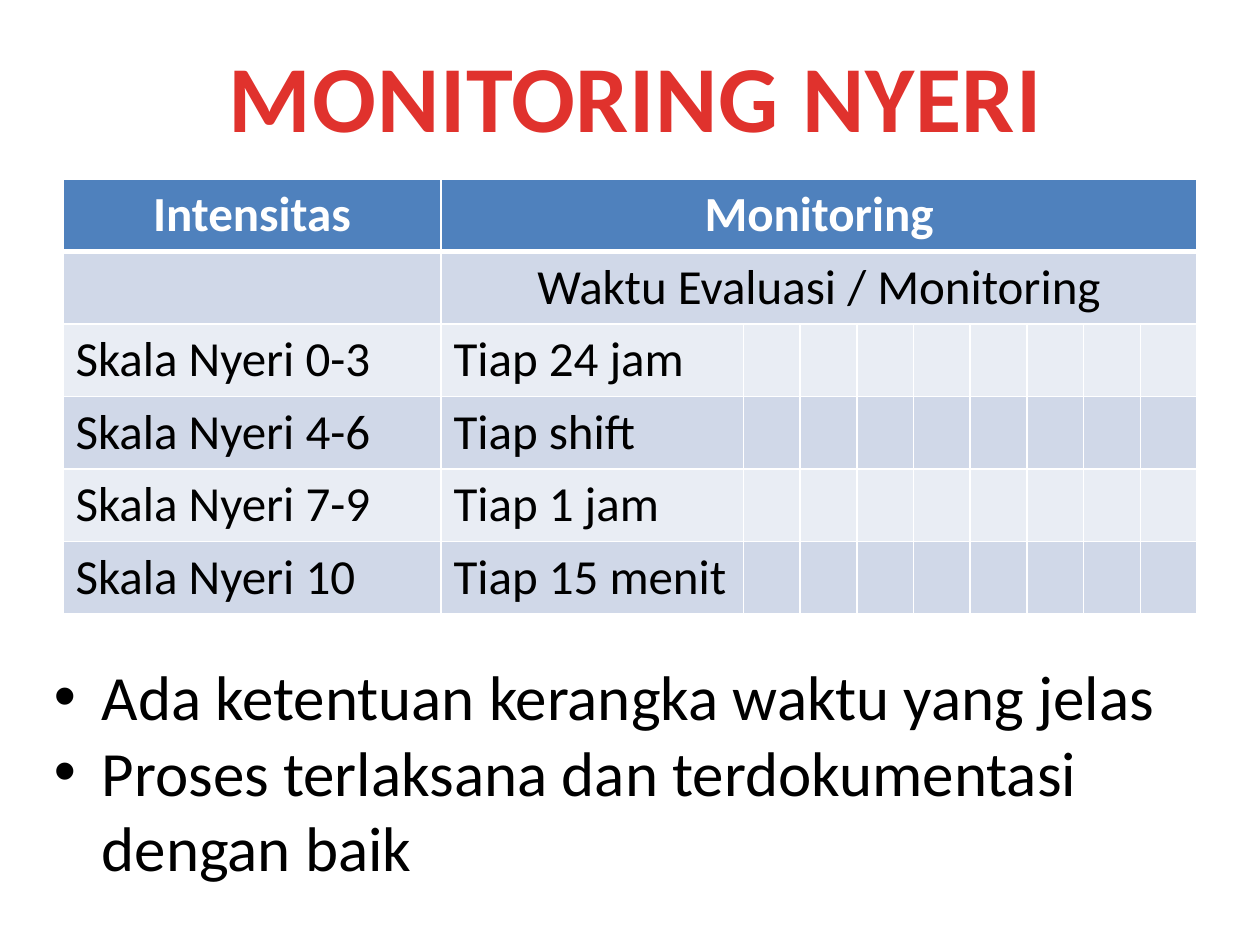
from typing import NamedTuple

from lxml.etree import SubElement
from pptx import Presentation
from pptx.dml.color import RGBColor
from pptx.enum.text import MSO_ANCHOR, MSO_AUTO_SIZE, PP_ALIGN
from pptx.oxml.ns import qn
from pptx.util import Inches, Pt

FONT = "Calibri"
WHITE, BLACK, RED = "FFFFFF", "000000", "E0322D"
HEADER_FILL, DARK_BAND, LIGHT_BAND = "4F81BD", "D0D8E8", "E9EDF4"
COLUMN_WIDTHS = [3, 2.4] + [0.45] * 8
ROW_HEIGHT = 0.575


class TableRow(NamedTuple):
    intensity: str
    monitoring: str
    fill: str
    merged: bool = False
    header: bool = False


TABLE_ROWS = [
    TableRow("Intensitas", "Monitoring", HEADER_FILL, merged=True, header=True),
    TableRow("", "Waktu Evaluasi / Monitoring", DARK_BAND, merged=True),
    TableRow("Skala Nyeri 0-3", "Tiap 24 jam", LIGHT_BAND),
    TableRow("Skala Nyeri 4-6", "Tiap shift", DARK_BAND),
    TableRow("Skala Nyeri 7-9", "Tiap 1 jam", LIGHT_BAND),
    TableRow("Skala Nyeri 10", "Tiap 15 menit", DARK_BAND),
]
BULLETS = [
    "Ada ketentuan kerangka waktu yang jelas",
    "Proses terlaksana dan terdokumentasi dengan baik",
]


def color(value: str) -> RGBColor:
    return RGBColor.from_string(value)


def format_paragraph(paragraph, size: float, text_color: str,
                     bold: bool = False, centered: bool = False) -> None:
    paragraph.alignment = PP_ALIGN.CENTER if centered else PP_ALIGN.LEFT
    for run in paragraph.runs:
        run.font.name = FONT
        run.font.size = Pt(size)
        run.font.bold = bold
        run.font.color.rgb = color(text_color)


def add_text_box(slide, left: float, top: float, width: float, height: float,
                 text: str):
    box = slide.shapes.add_textbox(
        Inches(left), Inches(top), Inches(width), Inches(height))
    text_frame = box.text_frame
    text_frame.word_wrap = True
    text_frame.auto_size = MSO_AUTO_SIZE.SHAPE_TO_FIT_TEXT
    text_frame.text = text
    return text_frame


def set_borders(cell, top: float, bottom: float) -> None:
    """Draw white borders; side borders are always one point wide."""
    properties = cell._tc.get_or_add_tcPr()
    widths = {"a:lnL": 1, "a:lnR": 1, "a:lnT": top, "a:lnB": bottom}
    for tag, width in widths.items():
        line = SubElement(properties, qn(tag), w=str(Pt(width)))
        fill = SubElement(line, qn("a:solidFill"))
        SubElement(fill, qn("a:srgbClr"), val=WHITE)


def add_bullet(paragraph) -> None:
    properties = paragraph._p.get_or_add_pPr()
    properties.set("marL", str(Inches(0.38)))
    properties.set("indent", str(-Inches(0.38)))
    SubElement(properties, qn("a:buFont"), typeface="Arial")
    SubElement(properties, qn("a:buChar"), char="•")


def add_title(slide) -> None:
    text_frame = add_text_box(slide, 0.42, 0.25, 9.25, 1.01, "MONITORING NYERI")
    paragraph = text_frame.paragraphs[0]
    format_paragraph(paragraph, 54, RED, bold=True, centered=True)
    paragraph.runs[0]._r.get_or_add_rPr().set("spc", "50")


def add_monitoring_table(slide) -> None:
    table = slide.shapes.add_table(
        len(TABLE_ROWS), len(COLUMN_WIDTHS), Inches(0.5), Inches(1.42),
        Inches(sum(COLUMN_WIDTHS)), Inches(ROW_HEIGHT * len(TABLE_ROWS))).table
    for column, width in zip(table.columns, COLUMN_WIDTHS):
        column.width = Inches(width)

    for row_index, row in enumerate(TABLE_ROWS):
        table.rows[row_index].height = Inches(ROW_HEIGHT)
        for cell in table.rows[row_index].cells:
            set_borders(cell, top=3 if row_index == 1 else 1,
                        bottom=3 if row.header else 1)
            cell.fill.solid()
            cell.fill.fore_color.rgb = color(row.fill)
        for column_index, text in enumerate((row.intensity, row.monitoring)):
            cell = table.cell(row_index, column_index)
            cell.text_frame.text = text
            format_paragraph(cell.text_frame.paragraphs[0], 28,
                             WHITE if row.header else BLACK,
                             bold=row.header, centered=row.merged)
        if row.merged:
            first_cell = table.cell(row_index, 1)
            first_cell.merge(table.cell(row_index, len(COLUMN_WIDTHS) - 1))
            if row.header:
                first_cell.vertical_anchor = MSO_ANCHOR.MIDDLE


def add_bullet_list(slide) -> None:
    text_frame = add_text_box(slide, 0.33, 5.17, 9.17, 1.92, "\n".join(BULLETS))
    for paragraph in text_frame.paragraphs:
        format_paragraph(paragraph, 36, BLACK)
        add_bullet(paragraph)


def main() -> None:
    presentation = Presentation()
    presentation.slide_width = Inches(10)
    presentation.slide_height = Inches(7.5)
    slide = presentation.slides.add_slide(presentation.slide_layouts[6])
    add_monitoring_table(slide)
    add_title(slide)
    add_bullet_list(slide)
    presentation.save("out.pptx")


if __name__ == "__main__":
    main()
